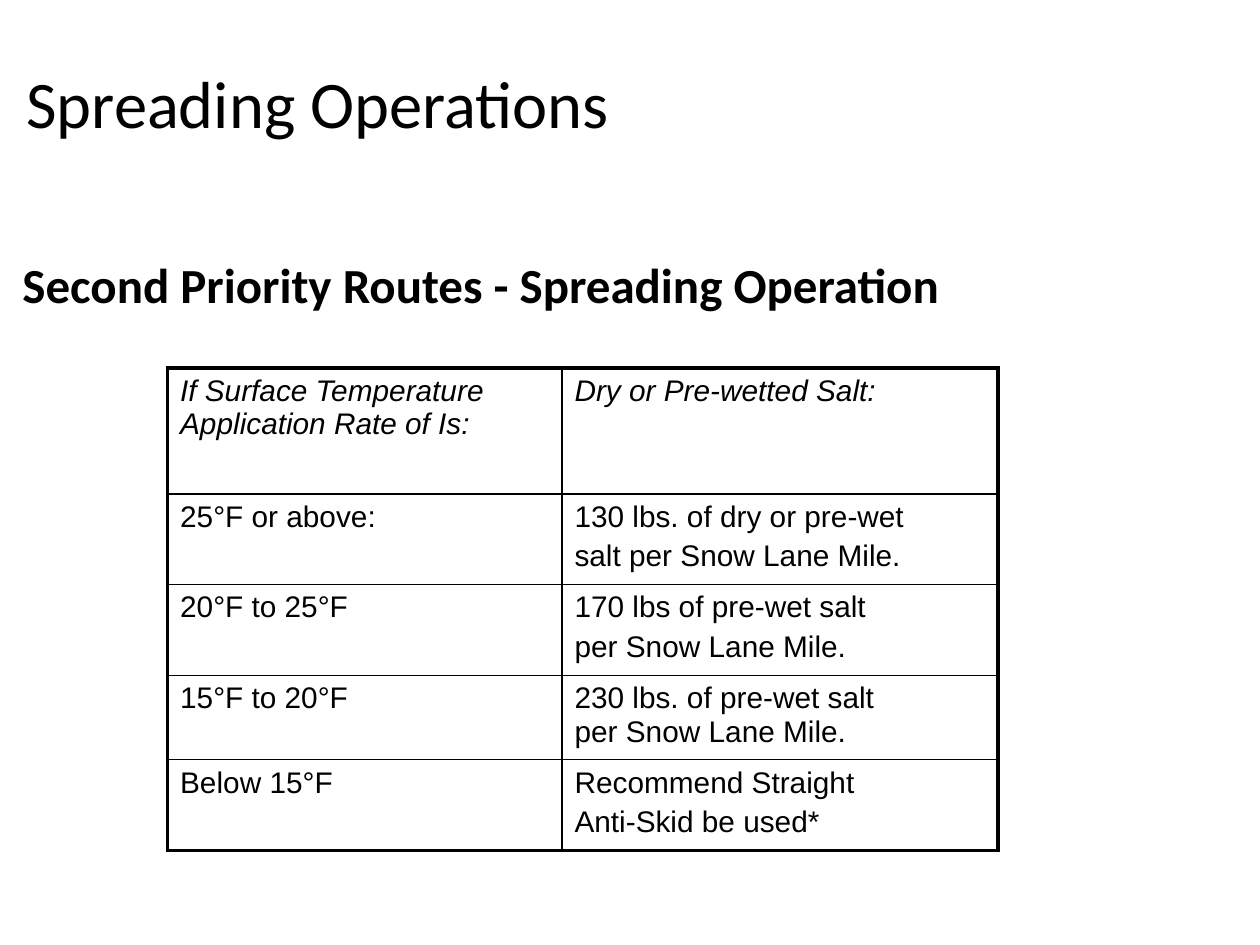
from lxml import etree
from pptx import Presentation
from pptx.dml.color import RGBColor
from pptx.enum.text import MSO_ANCHOR
from pptx.oxml.ns import qn
from pptx.util import Inches, Pt

TOP, MIDDLE = MSO_ANCHOR.TOP, MSO_ANCHOR.MIDDLE

THEME = {
    "ink": "000000",
    "heading_font": "Calibri", "table_font": "Arial",
    "title": 38, "subtitle": 28, "cell": 17,
    "outer": 2.25, "inner": 1,
}


def write(tf, text, size, font=THEME["heading_font"], bold=False, italic=False, gap=0, anchor=TOP):
    tf.word_wrap = True
    tf.vertical_anchor = anchor
    for i, line in enumerate(text.split("\n")):
        p = tf.add_paragraph() if i else tf.paragraphs[0]
        p.space_before = Pt(gap if i else 0)
        r = p.add_run()
        r.text = line
        r.font.name = font
        r.font.size = Pt(size)
        r.font.bold = bold
        r.font.italic = italic
        r.font.color.rgb = RGBColor.from_string(THEME["ink"])


def set_border(cell, side, width):
    ln = etree.SubElement(cell._tc.get_or_add_tcPr(), qn(f"a:ln{side}"), w=str(Pt(width)))
    fill = etree.SubElement(ln, qn("a:solidFill"))
    etree.SubElement(fill, qn("a:srgbClr"), val=THEME["ink"])


prs = Presentation()
prs.slide_width, prs.slide_height = Inches(10), Inches(7.5)
s = prs.slides.add_slide(prs.slide_layouts[6])

rows = [
    ("If Surface Temperature Application Rate of Is:", "Dry or Pre-wetted Salt:"),
    ("25°F or above:", "130 lbs. of dry or pre-wet\nsalt per Snow Lane Mile."),
    ("20°F to 25°F", "170 lbs of pre-wet salt\nper Snow Lane Mile."),
    ("15°F to 20°F", "230 lbs. of pre-wet salt\nper Snow Lane Mile."),
    ("Below 15°F", "Recommend Straight\nAnti-Skid be used*"),
]
col_widths = [3.13, 3.46]
row_heights = [1, 0.72, 0.72, 0.67, 0.72]
line_gaps = [0, 3.4, 3.4, 0, 3.4]

table = s.shapes.add_table(
    len(rows), len(col_widths), Inches(1.33), Inches(2.92),
    Inches(sum(col_widths)), Inches(sum(row_heights)),
).table
table.first_row = table.horz_banding = False
for col, width in zip(table.columns, col_widths):
    col.width = Inches(width)

for i, texts in enumerate(rows):
    table.rows[i].height = Inches(row_heights[i])
    for j, text in enumerate(texts):
        cell = table.cell(i, j)
        write(cell.text_frame, text, THEME["cell"], font=THEME["table_font"],
              italic=i == 0, gap=line_gaps[i])
        outer_sides = {"L": j == 0, "R": j == len(col_widths) - 1,
                       "T": i == 0, "B": i == len(rows) - 1}
        for side, is_outer in outer_sides.items():
            set_border(cell, side, THEME["outer" if is_outer else "inner"])
        cell.fill.background()

subtitle = s.shapes.add_textbox(Inches(0.08), Inches(1.97), Inches(9.08), Inches(0.57))
write(subtitle.text_frame, "Second Priority Routes - Spreading Operation",
      THEME["subtitle"], bold=True)

title = s.shapes.add_textbox(Inches(0.11), Inches(0.18), Inches(9), Inches(1.25))
write(title.text_frame, "Spreading Operations", THEME["title"], anchor=MIDDLE)

prs.save("out.pptx")
